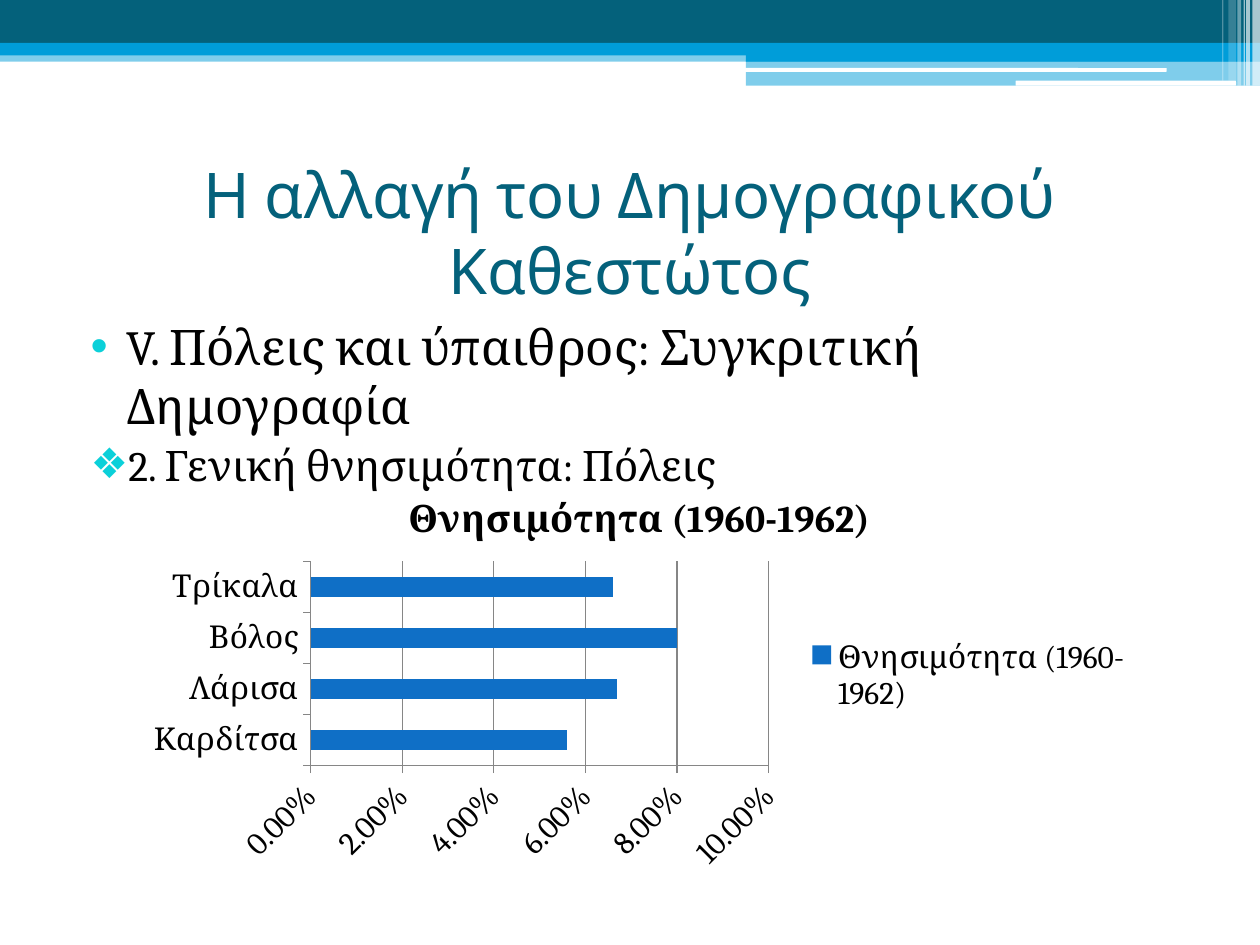
from lxml import etree
from pptx import Presentation
from pptx.chart.data import CategoryChartData
from pptx.dml.color import RGBColor
from pptx.enum.chart import XL_CHART_TYPE as ChartType, XL_LEGEND_POSITION as LegendSide
from pptx.enum.chart import XL_TICK_MARK as Tick
from pptx.enum.shapes import MSO_SHAPE as Shape
from pptx.enum.text import MSO_ANCHOR as Anchor, PP_ALIGN as Align
from pptx.oxml.ns import qn
from pptx.util import Inches, Pt

WIDTH, HEIGHT = 10, 7.5
COLORS = {"navy": "04617B", "sky": "009DD9", "white": "FFFFFF", "black": "000000",
          "bullet": "0BD0D9", "bar": "0F6FC6", "grid": "868686"}
TITLE = "Η αλλαγή του Δημογραφικού Καθεστώτος"
BODY = [("•", "V. Πόλεις και ύπαιθρος: Συγκριτική Δημογραφία", 28),
        ("❖", "2. Γενική θνησιμότητα: Πόλεις", 24)]
SERIES = "Θνησιμότητα (1960-1962)"
MORTALITY = {"Καρδίτσα": 0.056, "Λάρισα": 0.067, "Βόλος": 0.08, "Τρίκαλα": 0.066}

SPLIT = 5.92  # where the right-hand part of the banner starts
# left, top, width, height, colour, opacity in percent
BANDS = [(0, 0.4, WIDTH, 0.09, "sky", 50),
         (0, 0, WIDTH, 0.34, "navy", 100),
         (0, 0.34, WIDTH, 0.1, "sky", 100),
         (SPLIT, 0.39, WIDTH - SPLIT, 0.1, "sky", 100),
         (SPLIT, 0.48, WIDTH - SPLIT, 0.2, "sky", 50)]
RULES = [(5.91, 0.54, 3.35, 0.03, "white", 100),
         (8.06, 0.64, 1.75, 0.04, "white", 100)]
# left, width, height, opacity in percent
STRIPES = [(9.94, 0.06, 0.68, 65), (9.89, 0.03, 0.68, 65), (9.87, 0.01, 0.68, 60),
           (9.82, 0.03, 0.68, 40), (9.75, 0.06, 0.64, 20), (9.7, 0.01, 0.64, 30)]


def rgb(name):
    return RGBColor.from_string(COLORS[name])


def set_font(font, size, name="Cambria", color="black", bold=False):
    for key, value in {"size": Pt(size), "name": name, "bold": bold}.items():
        setattr(font, key, value)
    font.color.rgb = rgb(color)


def place(shape, *box):
    for key, value in zip(("left", "top", "width", "height"), box):
        setattr(shape, key, Inches(value))


def add_block(page, kind, left, top, width, height, color, opacity):
    block = page.shapes.add_shape(kind, *map(Inches, (left, top, width, height)))
    block.shadow.inherit = False
    block.line.fill.background()
    block.fill.solid()
    block.fill.fore_color.rgb = rgb(color)
    if opacity < 100:
        tint = block.fill._xPr.find(".//" + qn("a:srgbClr"))
        etree.SubElement(tint, qn("a:alpha"), val=str(opacity * 1000))


def add_bullet(para, symbol):
    props = para._p.get_or_add_pPr()
    props.set("marL", str(Inches(0.4)))
    props.set("indent", str(Inches(-0.28)))
    tint = etree.SubElement(props, qn("a:buClr"))
    etree.SubElement(tint, qn("a:srgbClr"), val=COLORS["bullet"])
    etree.SubElement(props, qn("a:buFont"), typeface="Arial")
    etree.SubElement(props, qn("a:buChar"), char=symbol)


def add_banner(page):
    for band in BANDS:
        add_block(page, Shape.RECTANGLE, *band)
    for rule in RULES:
        add_block(page, Shape.ROUNDED_RECTANGLE, *rule)
    for left, width, height, opacity in STRIPES:
        add_block(page, Shape.RECTANGLE, left, 0, width, height, "white", opacity)


def fill_text(page):
    title, body = page.placeholders
    place(title, 0.5, 1.25, 9, 1.17)
    title.text_frame.text = TITLE
    title.text_frame.vertical_anchor = Anchor.MIDDLE
    heading = title.text_frame.paragraphs[0]
    heading.alignment = Align.CENTER
    set_font(heading.runs[0].font, 36, "Cabin", "navy")

    place(body, 0.5, 2.46, 9, 4.73)
    frame = body.text_frame
    for index, (symbol, text, size) in enumerate(BODY):
        para = frame.add_paragraph() if index else frame.paragraphs[0]
        para.space_before = Pt(3 if index else 0)
        add_bullet(para, symbol)
        span = para.add_run()
        span.text = text
        set_font(span.font, size)


def add_mortality_chart(page):
    data = CategoryChartData(number_format="0.00%")
    data.categories = list(MORTALITY)
    data.add_series(SERIES, list(MORTALITY.values()))
    box = map(Inches, (1.06, 3.75, 8.03, 3.23))
    chart = page.shapes.add_chart(ChartType.BAR_STACKED, *box, data).chart
    set_font(chart.font, 18)

    chart.has_title = True
    heading = chart.chart_title.text_frame
    heading.text = SERIES
    set_font(heading.paragraphs[0].runs[0].font, 21.6, bold=True)
    chart.chart_title.include_in_layout = False

    chart.has_legend = True
    chart.legend.position = LegendSide.RIGHT
    chart.legend.include_in_layout = False

    plot = chart.plots[0]
    for key, value in {"gap_width": 150, "overlap": 100, "vary_by_categories": False}.items():
        setattr(plot, key, value)
    bars = plot.series[0].format.fill
    bars.solid()
    bars.fore_color.rgb = rgb("bar")

    rates = chart.value_axis
    rates.minimum_scale, rates.maximum_scale, rates.major_unit = 0, 0.1, 0.02
    rates.has_major_gridlines = True
    rates.tick_labels.number_format = "0.00%"
    rates.tick_labels.number_format_is_linked = False
    set_font(rates.tick_labels.font, 18)
    rates._element.find(qn("c:txPr")).find(qn("a:bodyPr")).set("rot", "-2700000")
    for axis in (chart.category_axis, rates):
        axis.major_tick_mark, axis.minor_tick_mark = Tick.OUTSIDE, Tick.NONE
    for part in (chart.category_axis, rates, rates.major_gridlines):
        part.format.line.color.rgb = rgb("grid")
        part.format.line.width = Pt(0.75)


def main():
    deck = Presentation()
    deck.slide_width, deck.slide_height = Inches(WIDTH), Inches(HEIGHT)
    page = deck.slides.add_slide(deck.slide_layouts[1])
    add_banner(page)
    fill_text(page)
    add_mortality_chart(page)
    deck.save("out.pptx")


if __name__ == "__main__":
    main()
